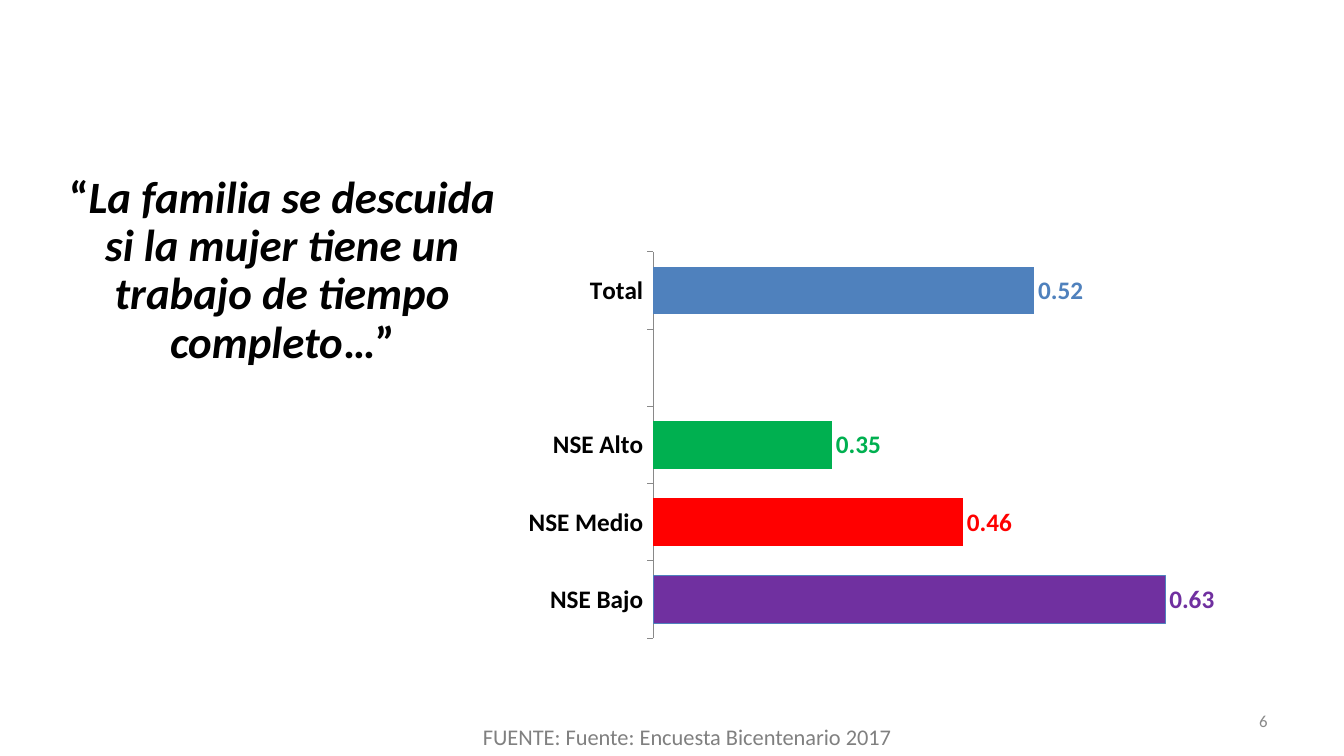
import lxml.etree
import pptx
import pptx.chart.data
import pptx.dml.color
import pptx.enum.chart
import pptx.enum.text
import pptx.oxml
import pptx.oxml.ns
import pptx.util

RGB = pptx.dml.color.RGBColor.from_string
ALIGN = pptx.enum.text.PP_ALIGN
ANCHOR = pptx.enum.text.MSO_ANCHOR

THEME = {
    "font": "Calibri",
    "ink": RGB("000000"),
    "footer": RGB("808080"),
    "number": RGB("898989"),
    "bar": RGB("4F81BD"),
    "quote_size": pptx.util.Pt(32),
    "chart_size": pptx.util.Pt(18),
    "footer_size": pptx.util.Pt(16),
    "number_size": pptx.util.Pt(12),
}

deck = pptx.Presentation()
deck.slide_width = pptx.util.Inches(13.33)
deck.slide_height = pptx.util.Inches(7.5)
page = deck.slides.add_slide(deck.slide_layouts[6])


def place(left, top, width, height):
    """Turn percentages of the slide into lengths."""
    across, down = deck.slide_width / 100, deck.slide_height / 100
    return int(left * across), int(top * down), int(width * across), int(height * down)


def add_text(area, parts, role, colour, align, anchor):
    """Add a one-paragraph box; parts are (text, bold, italic)."""
    box = page.shapes.add_textbox(*place(*area))
    box.text_frame.word_wrap = True
    box.text_frame.vertical_anchor = anchor
    para = box.text_frame.paragraphs[0]
    para.alignment = align
    for text, bold, italic in parts:
        span = para.add_run()
        span.text = text
        span.font.name = THEME["font"]
        span.font.size = THEME[role + "_size"]
        span.font.color.rgb = THEME[colour]
        span.font.bold = bold
        span.font.italic = italic
    return box


# Texts
add_text((71.72, 92.67, 23.33, 5.33), [("6", False, False)],
         "number", "number", ALIGN.RIGHT, ANCHOR.MIDDLE)
quote = add_text(
    (3.38, 18.53, 35.26, 34.67),
    [("“", True, False),
     ("La familia se descuida si la mujer tiene un trabajo de tiempo completo", True, True),
     ("…”", True, False)],
    "quote", "ink", ALIGN.CENTER, ANCHOR.MIDDLE)
quote.text_frame.paragraphs[0].line_spacing = 0.9
source = add_text((26.11, 94.93, 50.04, 4.93),
                  [("FUENTE: Fuente: Encuesta Bicentenario 2017", False, False)],
                  "footer", "footer", ALIGN.CENTER, ANCHOR.TOP)
source.text_frame.auto_size = pptx.enum.text.MSO_AUTO_SIZE.SHAPE_TO_FIT_TEXT

# Chart: agreement by socioeconomic level
bars = [
    ("Total", 0.52, THEME["bar"]),
    ("", None, None),
    ("NSE Alto", 0.35, RGB("00B050")),
    ("NSE Medio", 0.46, RGB("FF0000")),
    ("NSE Bajo", 0.63, RGB("7030A0")),
]
data = pptx.chart.data.CategoryChartData()
data.categories = [name for name, value, colour in bars]
data.add_series("Series 1", [value for name, value, colour in bars])
chart = page.shapes.add_chart(pptx.enum.chart.XL_CHART_TYPE.BAR_CLUSTERED,
                              *place(33.83, 24.27, 64.22, 64.67), data).chart
chart.has_legend = False
chart.has_title = False
chart.font.name = THEME["font"]
chart.font.size = THEME["chart_size"]
chart.font.bold = True
chart.font.color.rgb = THEME["ink"]

levels = chart.category_axis
levels.reverse_order = True
levels.has_major_gridlines = False
levels.major_tick_mark = pptx.enum.chart.XL_TICK_MARK.OUTSIDE
levels.format.line.color.rgb = THEME["number"]
levels.format.line.width = pptx.util.Pt(0.75)

scale = chart.value_axis
scale.visible = False
scale.has_major_gridlines = False
scale.minimum_scale = 0.2
scale.maximum_scale = 0.7

plot = chart.plots[0]
plot.gap_width = 63
plot.overlap = 56
plot.vary_by_categories = False
series = plot.series[0]
series.invert_if_negative = False
series.format.fill.solid()
series.format.fill.fore_color.rgb = THEME["bar"]

for index, (name, value, colour) in enumerate(bars):
    if value is None:
        continue
    point = series.points[index]
    point.format.fill.solid()
    point.format.fill.fore_color.rgb = colour
    label = point.data_label
    label.font.name = THEME["font"]
    label.font.size = THEME["chart_size"]
    label.font.bold = True
    label.font.color.rgb = colour
    label.position = pptx.enum.chart.XL_LABEL_POSITION.OUTSIDE_END
last_bar = series.points[len(bars) - 1]
last_bar.format.line.color.rgb = THEME["bar"]
last_bar.format.line.width = pptx.util.Pt(0.75)

# Fixed inner plot area, as shares of the chart
plot_area = chart.element.xpath("c:chart/c:plotArea")[0]
for old_layout in plot_area.xpath("c:layout"):
    plot_area.remove(old_layout)
layout = pptx.oxml.parse_xml("<c:layout %s/>" % pptx.oxml.ns.nsdecls("c"))
manual = lxml.etree.SubElement(layout, pptx.oxml.ns.qn("c:manualLayout"))
for tag, setting in [("layoutTarget", "inner"), ("xMode", "edge"), ("yMode", "edge"),
                     ("x", "0.23"), ("y", "0.14"), ("w", "0.69"), ("h", "0.79")]:
    lxml.etree.SubElement(manual, pptx.oxml.ns.qn("c:" + tag), val=setting)
plot_area.insert(0, layout)

deck.save("out.pptx")
